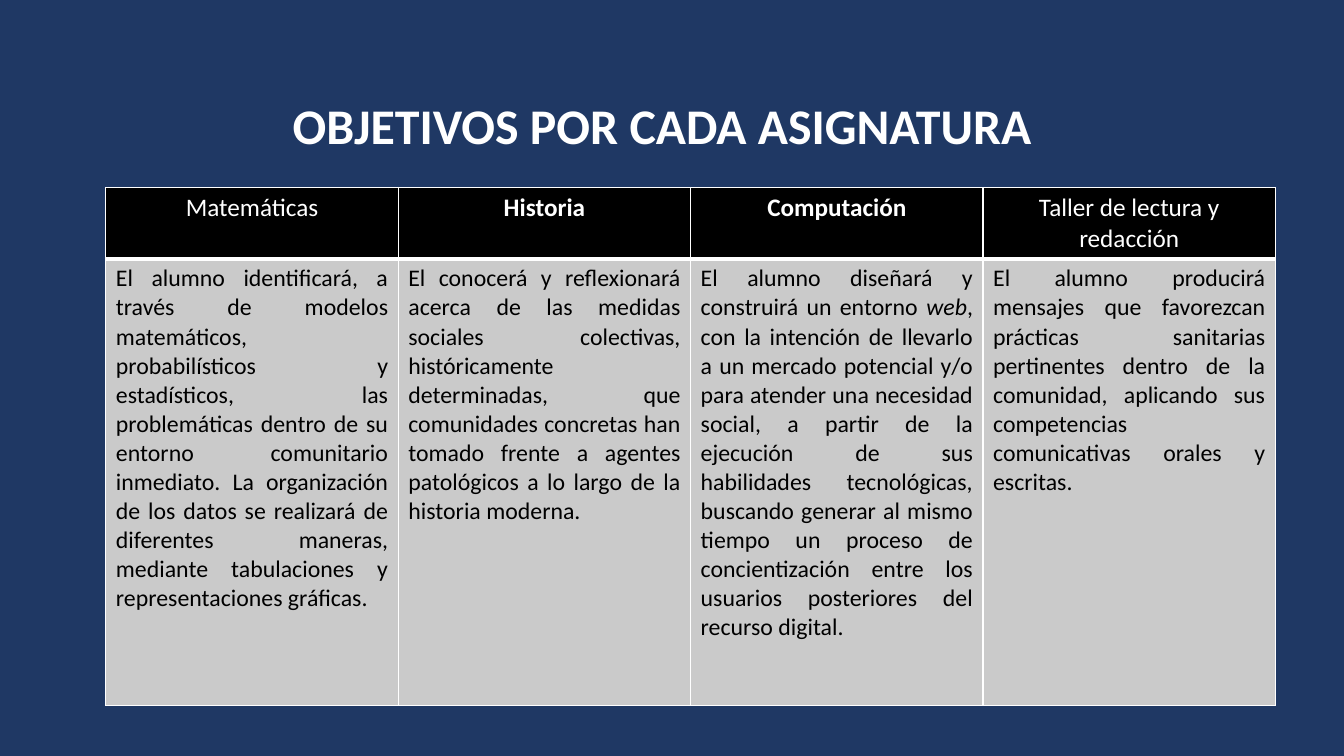
from dataclasses import dataclass

from lxml import etree
from pptx import Presentation
from pptx.dml.color import RGBColor
from pptx.enum.text import MSO_ANCHOR, PP_ALIGN
from pptx.oxml.ns import qn
from pptx.slide import Slide
from pptx.table import _Cell
from pptx.util import Inches, Pt

CENTER, JUSTIFY = PP_ALIGN.CENTER, PP_ALIGN.JUSTIFY
BOTTOM = MSO_ANCHOR.BOTTOM


@dataclass(frozen=True)
class Theme:
    font: str = "Calibri"
    navy: str = "1F3864"
    white: str = "FFFFFF"
    black: str = "000000"
    gray: str = "CACACA"
    title: float = 35.6
    head: float = 18
    body: float = 17
    thin: float = 1
    thick: float = 3


@dataclass(frozen=True)
class Course:
    name: str
    bold: bool
    goal: str  # text between asterisks is italic


THEME = Theme()
COURSES = [
    Course("Matemáticas", False,
           "El alumno identificará, a través de modelos matemáticos, "
           "probabilísticos y estadísticos, las problemáticas dentro de su "
           "entorno comunitario inmediato. La organización de los datos se "
           "realizará de diferentes maneras, mediante tabulaciones y "
           "representaciones gráficas."),
    Course("Historia", True,
           "El conocerá y reflexionará acerca de las medidas sociales "
           "colectivas, históricamente determinadas, que comunidades "
           "concretas han tomado frente a agentes patológicos a lo largo de "
           "la historia moderna."),
    Course("Computación", True,
           "El alumno diseñará y construirá un entorno *web*, con la "
           "intención de llevarlo a un mercado potencial y/o para atender una "
           "necesidad social, a partir de la ejecución de sus habilidades "
           "tecnológicas, buscando generar al mismo tiempo un proceso de "
           "concientización entre los usuarios posteriores del recurso "
           "digital."),
    Course("Taller de lectura y redacción", False,
           "El alumno producirá mensajes que favorezcan prácticas sanitarias "
           "pertinentes dentro de la comunidad, aplicando sus competencias "
           "comunicativas orales y escritas."),
]


def style(font, size: float, color: str, bold: bool) -> None:
    font.name, font.size, font.bold = THEME.font, Pt(size), bold
    font.color.rgb = RGBColor.from_string(color)


def border(cell: _Cell, top: float, bottom: float) -> None:
    props = cell._tc.get_or_add_tcPr()
    sides = {"lnL": THEME.thin, "lnR": THEME.thin, "lnT": top, "lnB": bottom}
    for spot, (side, width) in enumerate(sides.items()):
        line = etree.Element(qn(f"a:{side}"), w=str(Pt(width)))
        fill = etree.SubElement(line, qn("a:solidFill"))
        etree.SubElement(fill, qn("a:srgbClr"), val=THEME.white)
        props.insert(spot, line)


def paint(cell: _Cell, color: str) -> None:
    cell.fill.solid()
    cell.fill.fore_color.rgb = RGBColor.from_string(color)


def add_title(slide: Slide) -> None:
    title = slide.shapes.title
    title.left, title.top = Inches(1.57), Inches(0.45)
    title.width, title.height = Inches(10), Inches(1.14)
    frame = title.text_frame
    frame.text = "OBJETIVOS POR CADA ASIGNATURA"
    frame.word_wrap = True
    frame.vertical_anchor = BOTTOM
    line = frame.paragraphs[0]
    line.alignment, line.line_spacing = CENTER, 0.9
    style(line.runs[0].font, THEME.title, THEME.white, True)


def fill_head(cell: _Cell, course: Course) -> None:
    paint(cell, THEME.black)
    border(cell, THEME.thin, THEME.thick)
    line = cell.text_frame.paragraphs[0]
    line.text = course.name
    line.alignment = CENTER
    style(line.runs[0].font, THEME.head, THEME.white, course.bold)


def fill_goal(cell: _Cell, course: Course) -> None:
    paint(cell, THEME.gray)
    border(cell, THEME.thick, THEME.thin)
    line = cell.text_frame.paragraphs[0]
    line.alignment = JUSTIFY
    for spot, part in enumerate(course.goal.split("*")):
        run = line.add_run()
        run.text = part
        style(run.font, THEME.body, THEME.black, False)
        run.font.italic = spot % 2 == 1


def add_goals(slide: Slide) -> None:
    count = len(COURSES)
    table = slide.shapes.add_table(
        2, count, Inches(1.05), Inches(1.86),
        Inches(2.9 * count), Inches(5.13)).table
    table.horz_banding = False
    table.rows[0].height, table.rows[1].height = Inches(0.7), Inches(4.43)
    for col, course in enumerate(COURSES):
        table.columns[col].width = Inches(2.9)
        fill_head(table.cell(0, col), course)
        fill_goal(table.cell(1, col), course)


def main() -> None:
    deck = Presentation()
    deck.slide_width, deck.slide_height = Inches(13.33), Inches(7.5)
    slide = deck.slides.add_slide(deck.slide_layouts[5])
    # Background
    back = slide.background.fill
    back.solid()
    back.fore_color.rgb = RGBColor.from_string(THEME.navy)
    # Content
    add_title(slide)
    add_goals(slide)
    deck.save("out.pptx")


if __name__ == "__main__":
    main()
